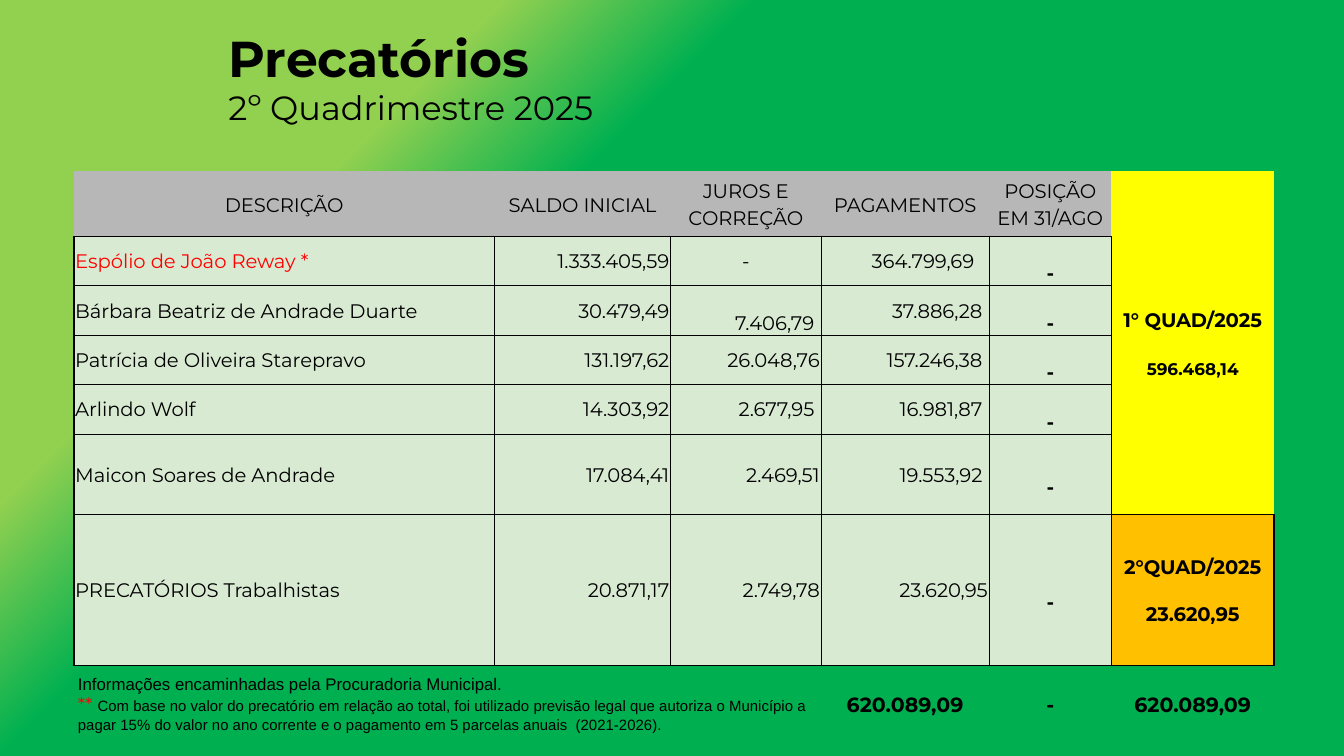
from lxml import etree
from pptx import Presentation
from pptx.dml.color import RGBColor
from pptx.enum.text import MSO_ANCHOR, MSO_AUTO_SIZE, PP_ALIGN
from pptx.oxml.ns import qn
from pptx.util import Inches, Pt

LEFT, CENTER, RIGHT = PP_ALIGN.LEFT, PP_ALIGN.CENTER, PP_ALIGN.RIGHT
MIDDLE, BOTTOM = MSO_ANCHOR.MIDDLE, MSO_ANCHOR.BOTTOM
FONT = "Montserrat"
BLACK, RED, GREY, MINT = "000000", "FF0000", "B7B7B7", "D9EAD3"
YELLOW, ORANGE = "FFFF00", "FFC000"
PLAIN_STYLE = "{2D5ABB26-0587-4C30-8999-92F81FD0307C}"
COLUMNS = [3.13, 1.31, 1.12, 1.25, 0.91, 1.21]
ROWS = [0.49, 0.36, 0.36, 0.36, 0.37, 0.6, 1.12, 0.58]
HALF_LINE = 0.19  # top inset that lowers a middle-anchored line by half its height
EDGE, GAP, WIDE_GAP = 0.01, 0.05, 0.11  # right insets of the figures

HEADERS = ["DESCRIÇÃO", "SALDO INICIAL", "JUROS E CORREÇÃO", "PAGAMENTOS",
           "POSIÇÃO EM 31/AGO"]
# Name, opening balance, (interest, inset), (payment, inset)
CREDITORS = [
    ("Espólio de João Reway *", "1.333.405,59", ("-", EDGE), ("364.799,69", WIDE_GAP)),
    ("Bárbara Beatriz de Andrade Duarte", "30.479,49", ("7.406,79", GAP), ("37.886,28", GAP)),
    ("Patrícia de Oliveira Starepravo", "131.197,62", ("26.048,76", EDGE), ("157.246,38", GAP)),
    ("Arlindo Wolf", "14.303,92", ("2.677,95", GAP), ("16.981,87", GAP)),
    ("Maicon Soares de Andrade", "17.084,41", ("2.469,51", EDGE), ("19.553,92", GAP)),
    ("PRECATÓRIOS Trabalhistas", "20.871,17", ("2.749,78", EDGE), ("23.620,95", EDGE)),
]
LOWERED_INTEREST = "7.406,79"


def color(value):
    return RGBColor.from_string(value)


def add_span(para, text, size=10.5, fill=BLACK, **formats):
    span = para.add_run()
    span.text = text
    values = {"name": FONT, "size": Pt(size), "bold": False, **formats}
    for name, value in values.items():
        setattr(span.font, name, value)
    span.font.color.rgb = color(fill)


def format_para(para, **formats):
    for name, value in formats.items():
        setattr(para, name, value)


def set_borders(cell, sides):
    properties = cell._tc.get_or_add_tcPr()
    for side in "LRTB":
        if side in sides:
            line = etree.SubElement(properties, qn(f"a:ln{side}"), w=str(Pt(0.75)))
            solid = etree.SubElement(line, qn("a:solidFill"))
            etree.SubElement(solid, qn("a:srgbClr"), val=BLACK)


def style_cell(cell, fill=None, sides="", insets=(0.01, 0.01, 0.01, 0)):
    set_borders(cell, sides)
    if fill:
        cell.fill.solid()
        cell.fill.fore_color.rgb = color(fill)
    else:
        cell.fill.background()
    cell.vertical_anchor = MIDDLE
    for side, inset in zip(("left", "top", "right", "bottom"), insets):
        setattr(cell, f"margin_{side}", Inches(inset))


def write_cell(cell, text, align=CENTER, spacing=None, **formats):
    para = cell.text_frame.paragraphs[0]
    format_para(para, alignment=align, line_spacing=spacing)
    add_span(para, text, **formats)


def write_total(cell, label, amount, amount_size, spacing):
    write_cell(cell, label, spacing=spacing, bold=True)
    para = cell.text_frame.add_paragraph()
    format_para(para, alignment=CENTER, line_spacing=spacing, space_before=Pt(12.5))
    add_span(para, amount, size=amount_size, bold=True)


def paint_background(slide):
    fill = slide.background.fill
    fill.gradient()
    fill.gradient_angle = 315
    for stop, (position, value) in zip(fill.gradient_stops,
                                       [(0.24, "92D050"), (0.36, "00B050")]):
        stop.position = position
        stop.color.rgb = color(value)


def write_title(slide):
    box = slide.shapes.title
    for name, value in {"left": 1.6, "top": 0.19, "width": 7.75, "height": 0.81}.items():
        setattr(box, name, Inches(value))
    frame = box.text_frame
    frame.auto_size = MSO_AUTO_SIZE.NONE
    frame.vertical_anchor = BOTTOM
    para = frame.paragraphs[0]
    format_para(para, alignment=LEFT, line_spacing=1.0)
    add_span(para, "Precatórios", size=27, bold=True)
    para.add_line_break()
    add_span(para, "2º Quadrimestre 2025", size=18)


def add_grid(slide):
    table = slide.shapes.add_table(len(ROWS), len(COLUMNS), Inches(0.55), Inches(1.27),
                                   Inches(sum(COLUMNS)), Inches(sum(ROWS))).table
    table.first_row = table.horz_banding = False
    table._tbl.tblPr.find(qn("a:tableStyleId")).text = PLAIN_STYLE
    for column, width in zip(table.columns, COLUMNS):
        column.width = Inches(width)
    for row, height in zip(table.rows, ROWS):
        row.height = Inches(height)
    return table


def fill_header(table):
    for index, text in enumerate(HEADERS):
        cell = table.cell(0, index)
        style_cell(cell, GREY, "B", (0.03, 0.02, 0.03, 0.02))
        write_cell(cell, text, spacing=1.15)


def fill_creditors(table):
    for row, (name, balance, (interest, inset), (payment, gap)) in enumerate(CREDITORS, 1):
        interest_top = HALF_LINE if interest == LOWERED_INTEREST else 0.01
        entries = [
            (name, LEFT, 0.01, EDGE, {"fill": RED if row == 1 else BLACK}),
            (balance, RIGHT, 0.01, EDGE, {}),
            (interest, CENTER if interest == "-" else RIGHT, interest_top, inset, {}),
            (payment, RIGHT, 0.01, gap, {}),
            ("-", CENTER, HALF_LINE, EDGE, {"bold": True}),
        ]
        for column, (text, align, top, right, formats) in enumerate(entries):
            cell = table.cell(row, column)
            style_cell(cell, MINT, "LRTB", (0.01, top, right, 0))
            write_cell(cell, text, align, **formats)


def fill_quarters(table):
    first, second = table.cell(0, 5), table.cell(6, 5)
    first.merge(table.cell(5, 5))
    style_cell(first, YELLOW, "B", (0.03, 0.02, 0.03, 0.02))
    write_total(first, "1° QUAD/2025", "596.468,14", 9, 1.15)
    style_cell(second, ORANGE, "LRTB")
    write_total(second, "2°QUAD/2025", "23.620,95", 10.5, 1.0)


def fill_footer(table):
    note = table.cell(7, 0)
    note.merge(table.cell(7, 2))
    style_cell(note, sides="T", insets=(0.03, 0.02, 0.03, 0.02))
    write_cell(note, "Informações encaminhadas pela Procuradoria Municipal.", LEFT,
               size=9, name="Arial")
    para = note.text_frame.add_paragraph()
    add_span(para, "** ", size=10, fill=RED)
    add_span(para, "Com base no valor do precatório em relação ao total, foi utilizado "
             "previsão legal que autoriza o Município a pagar 15% do valor no ano corrente "
             "e o pagamento em 5 parcelas anuais  (2021-2026).", size=8, name="Arial")
    for column, text in enumerate(["620.089,09", "-", "620.089,09"], 3):
        cell = table.cell(7, column)
        style_cell(cell, sides="T")
        write_cell(cell, text, size=11, bold=True)


def main():
    deck = Presentation()
    # Widescreen page, 16 to 9
    deck.slide_width = Inches(10)
    deck.slide_height = deck.slide_width * 9 // 16
    slide = deck.slides.add_slide(deck.slide_layouts[5])
    paint_background(slide)
    write_title(slide)
    # Table of court-ordered debts
    table = add_grid(slide)
    fill_header(table)
    fill_creditors(table)
    fill_quarters(table)
    fill_footer(table)
    deck.save("out.pptx")


if __name__ == "__main__":
    main()
